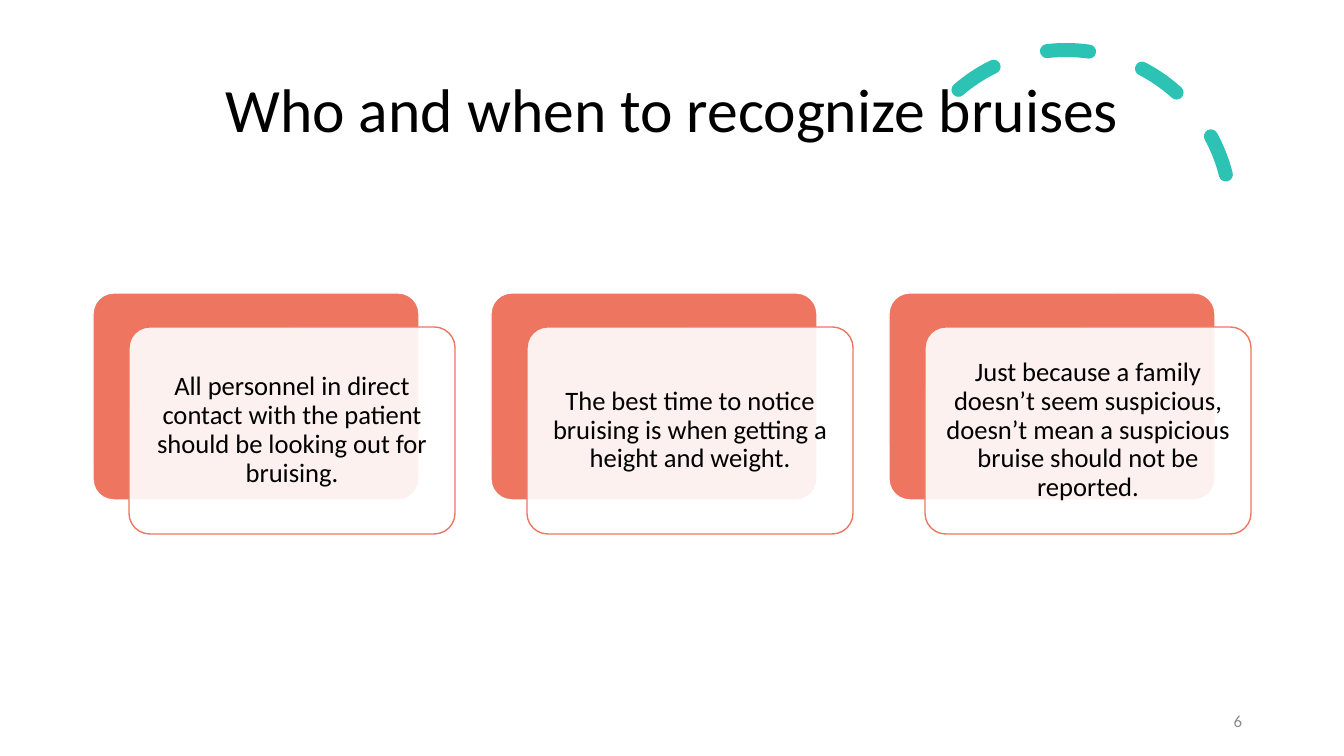
from lxml.etree import SubElement
from pptx import Presentation
from pptx.dml.color import RGBColor
from pptx.enum.dml import MSO_LINE_DASH_STYLE as Dash
from pptx.enum.shapes import MSO_SHAPE as Shape
from pptx.enum.text import MSO_ANCHOR as Anchor, PP_ALIGN as Align
from pptx.oxml.ns import qn
from pptx.util import Emu, Pt

EMU_PER_PX = 914400 / 100.8
COLORS = {
    "white": "FFFFFF",
    "black": "000000",
    "coral": "EE7661",
    "teal": "2CC3B4",
    "grey": "8C8C8C",
}
CARD_TEXTS = [
    "All personnel in direct contact with the patient should be looking out for bruising.",
    "The best time to notice bruising is when getting a height and weight.",
    "Just because a family doesn’t seem suspicious, doesn’t mean a suspicious bruise should not be reported.",
]
CARD_LEFT, CARD_TOP, CARD_STEP = 93, 293, 398
CARD_WIDTH, CARD_HEIGHT = 326, 207
SHIFT_X, SHIFT_Y = 36, 34


def px(length):
    return Emu(round(length * EMU_PER_PX))


def color(name):
    return RGBColor.from_string(COLORS[name])


def write_text(shape, text, size, align=Align.CENTER, tone="black", spacing=0.9, inset=None):
    frame = shape.text_frame
    frame.word_wrap = True
    frame.vertical_anchor = Anchor.MIDDLE
    if inset is not None:
        frame.margin_left = frame.margin_right = px(inset)
        frame.margin_top = frame.margin_bottom = px(inset)
    para = frame.paragraphs[0]
    para.alignment = align
    para.line_spacing = spacing
    span = para.add_run()
    span.text = text
    span.font.name = "Calibri"
    span.font.size = Pt(size)
    span.font.color.rgb = color(tone)


def add_title(page, text):
    title = page.shapes.title
    title.left, title.top, title.width, title.height = map(px, (93, 40, 1159, 146))
    write_text(title, text, 44)


def add_dashed_arc(page):
    arc = page.shapes.add_shape(Shape.ARC, px(901), px(50), px(330), px(330))
    arc.shadow.inherit = False
    arc.adjustments[0] = 146.129
    arc.adjustments[1] = 0
    arc.rotation = 345.8
    arc.fill.background()
    arc.line.color.rgb = color("teal")
    arc.line.width = Pt(10)
    arc.line.dash_style = Dash.DASH
    arc.line._get_or_add_ln().set("cap", "rnd")
    page.shapes._spTree.insert(2, arc._element)


def add_panel(page, left, top, fill, line):
    panel = page.shapes.add_shape(
        Shape.ROUNDED_RECTANGLE, px(left), px(top), px(CARD_WIDTH), px(CARD_HEIGHT)
    )
    panel.shadow.inherit = False
    panel.adjustments[0] = 0.1
    panel.fill.solid()
    panel.fill.fore_color.rgb = color(fill)
    panel.line.color.rgb = color(line)
    panel.line.width = Pt(1)
    return panel


def set_opacity(shape, percent):
    tone = shape._element.spPr.find(qn("a:solidFill")).find(qn("a:srgbClr"))
    SubElement(tone, qn("a:alpha")).set("val", str(percent * 1000))


def add_card(page, left, text):
    add_panel(page, left, CARD_TOP, "coral", "white")
    front = add_panel(page, left + SHIFT_X, CARD_TOP + SHIFT_Y, "white", "coral")
    set_opacity(front, 90)
    write_text(front, text, 19, inset=8)


def add_page_number(page, number):
    box = page.shapes.add_textbox(px(950), px(701), px(302), px(40))
    write_text(box, number, 12, align=Align.RIGHT, tone="grey", spacing=1.0)


def main():
    deck = Presentation()
    deck.slide_width, deck.slide_height = px(1344), px(756)
    page = deck.slides.add_slide(deck.slide_layouts[5])
    add_dashed_arc(page)
    add_title(page, "Who and when to recognize bruises")
    for index, text in enumerate(CARD_TEXTS):
        add_card(page, CARD_LEFT + index * CARD_STEP, text)
    add_page_number(page, "6")
    deck.save("out.pptx")


if __name__ == "__main__":
    main()
